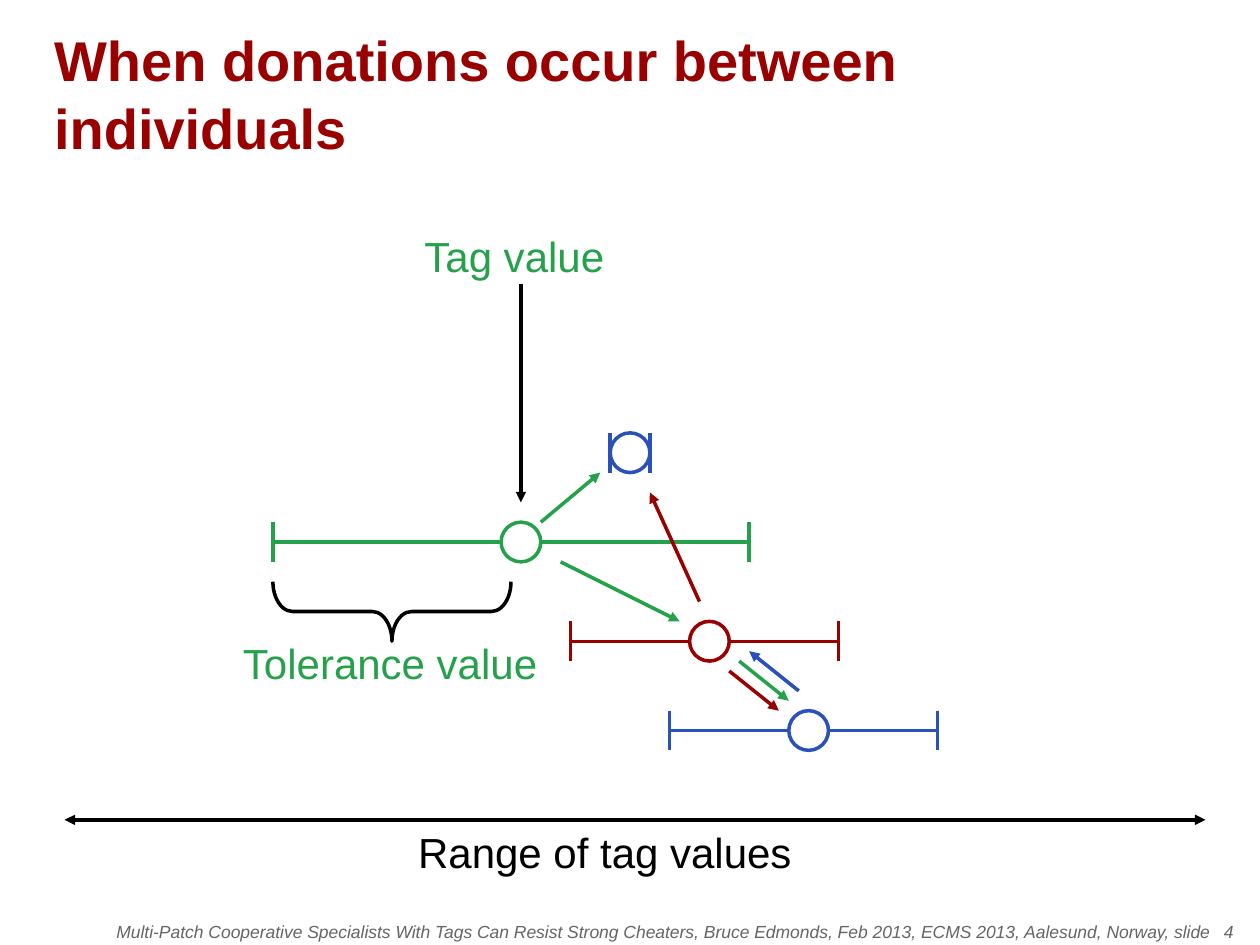
import pptx
import pptx.util
import pptx.dml.color
import pptx.enum.shapes
import pptx.enum.text
import pptx.oxml
import pptx.oxml.ns

Inches = pptx.util.Inches
SHAPES = pptx.enum.shapes.MSO_SHAPE
ALIGN = pptx.enum.text.PP_ALIGN
ANCHOR = pptx.enum.text.MSO_ANCHOR

COLORS = {"black": "000000", "red": "990000", "green": "25A14B",
          "blue": "2A50BA", "grey": "656565", "white": "FFFFFF"}

# Content: positions are columns and rows of a 2 mm grid
TITLE = "When donations occur between individuals"
FOOTER = ("Multi-Patch Cooperative Specialists With Tags Can Resist Strong Cheaters, "
          "Bruce Edmonds, Feb 2013, ECMS 2013, Aalesund, Norway, slide")
SLIDE_NUMBER = "4"

# colour, row, tag value, lower and upper tolerance limits
INDIVIDUALS = [
    ("red", 64, 71, 57, 84),
    ("green", 54, 52, 27, 75),
    ("blue", 73, 81, 67, 94),
    ("blue", 45, 63, 61, 65),
]
# colour, start, end
ARROWS = [
    ("green", (56, 56), (68, 62)),
    ("green", (74, 66), (79, 70)),
    ("red", (73, 67), (78, 71)),
    ("blue", (80, 69), (75, 65)),
    ("green", (54, 52), (60, 47)),
    ("red", (70, 60), (65, 49)),
    ("black", (52, 28), (52, 50)),
]
AXIS = ((6, 82), (121, 82))
BRACE = (27, 58, 51, 64)  # left, top, right, bottom
# text, colour, left, top, width in inches
LABELS = [
    ("Range of tag values", "black", 3.22, 6.51, 3.17),
    ("Tag value", "green", 3.27, 1.78, 1.67),
    ("Tolerance value", "green", 1.83, 5.01, 2.58),
]

CELL = pptx.util.Mm(2)
RADIUS = 2  # cells, also half the height of a limit mark
LINE_WIDTH = pptx.util.Pt(2)


def column(number):
    return Inches(0.04) + number * CELL


def row(number):
    return Inches(0.05) + number * CELL


def rgb(name):
    return pptx.dml.color.RGBColor.from_string(COLORS[name])


def format_font(font, color, **values):
    font.color.rgb = rgb(color)
    for name, value in ({"name": "Arial"} | values).items():
        setattr(font, name, value)


def format_line(shape, color):
    shape.line.color.rgb = rgb(color)
    shape.line.width = LINE_WIDTH


def add_line(slide, color, start, end, heads=()):
    line = slide.shapes.add_connector(
        pptx.enum.shapes.MSO_CONNECTOR.STRAIGHT,
        column(start[0]), row(start[1]), column(end[0]), row(end[1]))
    format_line(line, color)
    for head in heads:
        pptx.oxml.ns.qn("a:ln")
        element = line.line._get_or_add_ln()
        element.append(pptx.oxml.parse_xml(
            f'<a:{head} {pptx.oxml.ns.nsdecls("a")} type="triangle"/>'))
    line._element.spPr.append(pptx.oxml.parse_xml(
        f'<a:effectLst {pptx.oxml.ns.nsdecls("a")}/>'))


def add_individual(slide, color, level, tag, low, high):
    if high - low > 2 * RADIUS:
        add_line(slide, color, (low, level), (high, level))
    circle = slide.shapes.add_shape(
        SHAPES.OVAL, column(tag - RADIUS), row(level - RADIUS),
        2 * RADIUS * CELL, 2 * RADIUS * CELL)
    circle.shadow.inherit = False
    circle.fill.solid()
    circle.fill.fore_color.rgb = rgb("white")
    format_line(circle, color)
    for limit in (high, low):
        add_line(slide, color, (limit, level - RADIUS), (limit, level + RADIUS))


def add_brace(slide, left, top, right, bottom):
    # A left brace turned so that its point faces down
    width, height = (bottom - top) * CELL, (right - left) * CELL
    center_x, center_y = column((left + right) / 2), row((top + bottom) / 2)
    brace = slide.shapes.add_shape(
        SHAPES.LEFT_BRACE, int(center_x - width / 2), int(center_y - height / 2),
        width, height)
    brace.rotation = 270
    brace.adjustments[0] = 0.33
    brace.shadow.inherit = False
    brace.fill.background()
    format_line(brace, "black")


def add_label(slide, text, color, left, top, width):
    box = slide.shapes.add_textbox(Inches(left), Inches(top), Inches(width), Inches(0.5))
    box.text_frame.word_wrap = False
    paragraph = box.text_frame.paragraphs[0]
    paragraph.text = text
    format_font(paragraph.runs[0].font, color, size=pptx.util.Pt(24))


def add_footer(slide):
    box = slide.shapes.add_textbox(Inches(0.28), Inches(7.26), Inches(9.69), Inches(0.27))
    box.text_frame.word_wrap = True
    box.text_frame.margin_right = Inches(0.18)
    paragraph = box.text_frame.paragraphs[0]
    paragraph.alignment = ALIGN.RIGHT
    for text in (FOOTER, " ", SLIDE_NUMBER):
        run = paragraph.add_run()
        run.text = text
        format_font(run.font, "grey", size=pptx.util.Pt(10), italic=True)
    # Widen the gap before the slide number
    paragraph.runs[1].font._element.set("spc", "556")


def format_title(slide):
    title = slide.shapes.title
    place = {"left": 0.33, "top": 0.25, "width": 8.42, "height": 0.98}
    for name, value in place.items():
        setattr(title, name, Inches(value))
    frame = title.text_frame
    frame.text = TITLE
    settings = {"word_wrap": True, "vertical_anchor": ANCHOR.MIDDLE,
                "auto_size": pptx.enum.text.MSO_AUTO_SIZE.NONE}
    for name, value in settings.items():
        setattr(frame, name, value)
    paragraph = frame.paragraphs[0]
    paragraph.alignment = ALIGN.LEFT
    format_font(paragraph.runs[0].font, "red", size=pptx.util.Pt(32), bold=True)


def main():
    presentation = pptx.Presentation()
    presentation.slide_width, presentation.slide_height = Inches(10), Inches(7.5)
    slide = presentation.slides.add_slide(presentation.slide_layouts[5])
    format_title(slide)
    add_footer(slide)

    # Range of tag values and the individuals on it
    add_line(slide, "black", *AXIS, heads=("headEnd", "tailEnd"))
    for individual in INDIVIDUALS:
        add_individual(slide, *individual)

    # Donations and explanations
    for arrow in ARROWS:
        add_line(slide, *arrow, heads=("tailEnd",))
    add_brace(slide, *BRACE)
    for label in LABELS:
        add_label(slide, *label)

    presentation.save("out.pptx")


if __name__ == "__main__":
    main()
